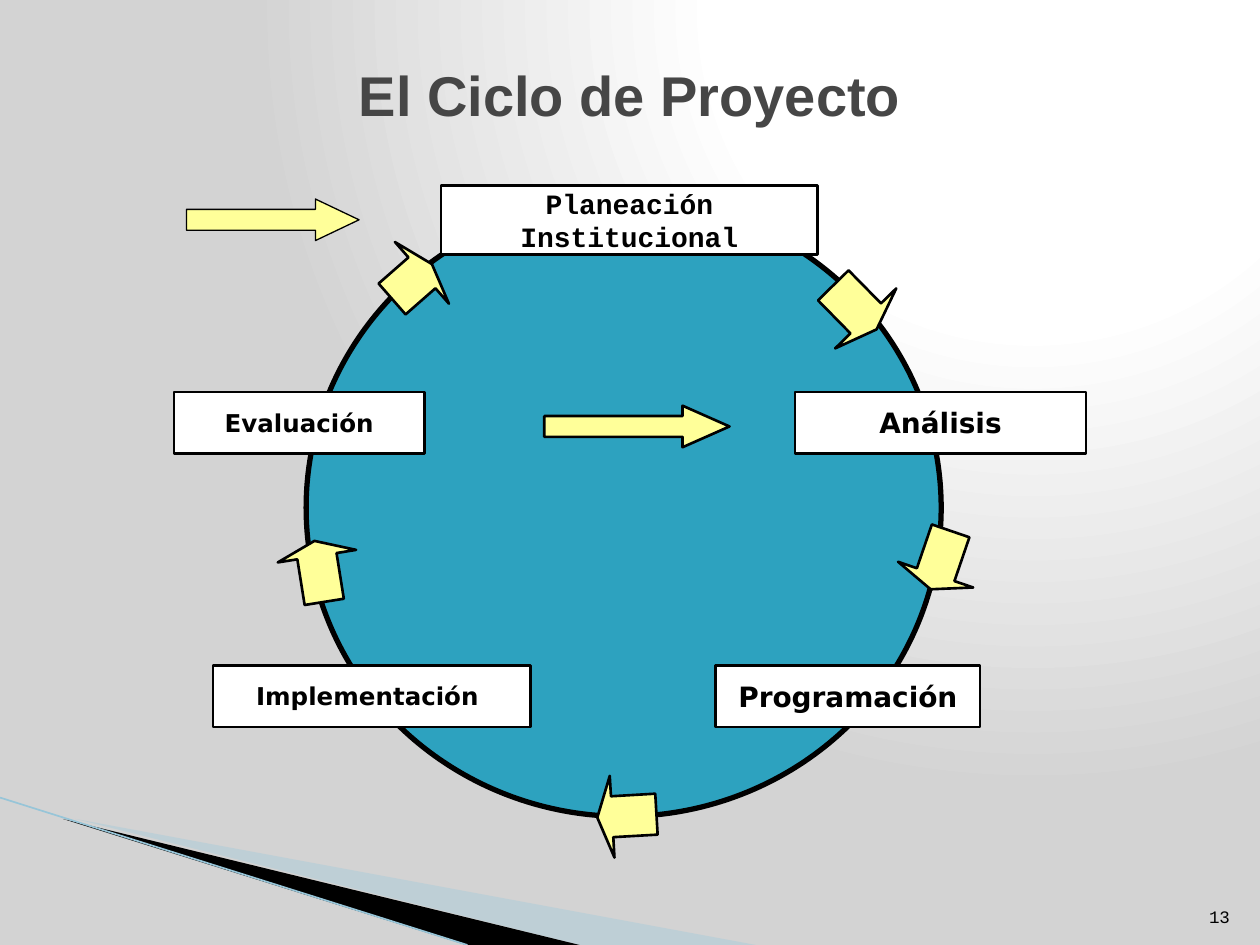
from typing import NamedTuple

from lxml.etree import SubElement
from pptx import Presentation
from pptx.dml.color import RGBColor
from pptx.enum.shapes import MSO_CONNECTOR, MSO_SHAPE
from pptx.enum.text import MSO_ANCHOR, PP_ALIGN
from pptx.oxml import parse_xml
from pptx.oxml.ns import nsdecls, qn
from pptx.util import Inches, Pt

COLS, ROWS = 100, 75
CELL = Inches(0.1)
COLORS = {
    "ink": "000000",
    "title": "464646",
    "paper": "FFFFFF",
    "edge": "D3D3D3",
    "disc": "2DA2BF",
    "arrow": "FFFF99",
    "wedge": "A0CBDC",
    "rule": "97C5D8",
}


class Area(NamedTuple):
    """Columns and rows of the grid."""
    left: float
    top: float
    width: float
    height: float


class Stage(NamedTuple):
    text: str
    area: Area
    size: int
    font: str = "DejaVu Sans"


class Arrow(NamedTuple):
    area: Area
    turn: float = 0
    head: float = 0.25
    line: float = 1.5


STAGES = [
    Stage("Planeación Institucional", Area(35, 14.7, 29.9, 5.5), 16, "Courier New"),
    Stage("Implementación ", Area(16.9, 52.8, 25.2, 4.9), 14),
    Stage("Programación", Area(56.8, 52.8, 21, 4.9), 16),
    Stage("Evaluación", Area(13.8, 31.1, 19.9, 4.9), 14),
    Stage("Análisis", Area(63.1, 31.1, 23.1, 4.9), 16),
]
ARROWS = [
    Arrow(Area(14.8, 15.8, 13.7, 3.3), head=1.05, line=0.75),
    Arrow(Area(30.6, 19.1, 4.2, 6.5), 318.8),
    Arrow(Area(65.4, 21, 4.9, 6.8), 45.5),
    Arrow(Area(43.2, 32.2, 14.7, 3.3), head=1.13),
    Arrow(Area(47.4, 61.5, 4.7, 6.5), 176.7),
    Arrow(Area(22.9, 42.2, 4.9, 6.3), 260.9),
    Arrow(Area(72.2, 41.3, 4.9, 6.3), 108.9),
]


def rgb(name: str) -> RGBColor:
    return RGBColor.from_string(COLORS[name])


def scale(area: Area) -> list[int]:
    return [round(n * CELL) for n in area]


def shade(slide) -> None:
    """Set the radial background, white at the upper right."""
    stops = "".join(
        f'<a:gs pos="{pos}000"><a:srgbClr val="{COLORS[name]}"/></a:gs>'
        for pos, name in ((0, "paper"), (40, "paper"), (100, "edge"))
    )
    slide.element.cSld.insert(0, parse_xml(
        f'<p:bg {nsdecls("p", "a")}><p:bgPr><a:gradFill rotWithShape="1">'
        f'<a:gsLst>{stops}</a:gsLst><a:path path="circle">'
        '<a:fillToRect l="65000" t="0" r="0" b="98000"/></a:path></a:gradFill>'
        '<a:effectLst/></p:bgPr></p:bg>'
    ))


def wedge(slide, points: list[tuple[float, float]], color: str, alpha: int = 100) -> None:
    form = slide.shapes.build_freeform(*points[0], scale=CELL)
    form.add_line_segments(points[1:])
    shape = form.convert_to_shape()
    shape.shadow.inherit = False
    shape.fill.solid()
    shape.fill.fore_color.rgb = rgb(color)
    shape.line.fill.background()
    if alpha < 100:
        tint = shape.fill._xPr.find(".//" + qn("a:srgbClr"))
        SubElement(tint, qn("a:alpha")).set("val", str(alpha * 1000))


def rule(slide) -> None:
    line = slide.shapes.add_connector(
        MSO_CONNECTOR.STRAIGHT, *scale(Area(0, 63.3, 37.1, ROWS)))
    line.line.color.rgb = rgb("rule")
    line.line.width = Pt(0.95)
    SubElement(line._element.spPr, qn("a:effectLst"))


def draw(slide, kind: MSO_SHAPE, area: Area, color: str, line: float):
    shape = slide.shapes.add_shape(kind, *scale(area))
    shape.shadow.inherit = False
    shape.fill.solid()
    shape.fill.fore_color.rgb = rgb(color)
    shape.line.color.rgb = rgb("ink")
    shape.line.width = Pt(line)
    return shape


def write(shape, text: str, size: int, font: str, color: str = "ink",
          bold: bool = True, align: PP_ALIGN = PP_ALIGN.CENTER,
          anchor: MSO_ANCHOR = MSO_ANCHOR.MIDDLE) -> None:
    frame = shape.text_frame
    frame.word_wrap = True
    frame.vertical_anchor = anchor
    par = frame.paragraphs[0]
    par.text = text
    par.alignment = align
    par.font.size = Pt(size)
    par.font.name = font
    par.font.bold = bold
    par.font.color.rgb = rgb(color)


def main() -> None:
    deck = Presentation()
    deck.slide_width, deck.slide_height = COLS * CELL, ROWS * CELL
    slide = deck.slides.add_slide(deck.slide_layouts[6])

    shade(slide)
    wedge(slide, [(5.5, 65.1), (59.5, ROWS), (45.6, ROWS), (5.5, 65)], "wedge", 40)
    wedge(slide, [(5.3, 64.9), (45.7, ROWS), (37.2, ROWS), (5.4, 65)], "ink")
    rule(slide)

    draw(slide, MSO_SHAPE.OVAL, Area(24.3, 15.8, 50.4, 49), "disc", 3)
    for stage in STAGES:
        box = draw(slide, MSO_SHAPE.RECTANGLE, stage.area, "paper", 1.5)
        write(box, stage.text, stage.size, stage.font)
    for arrow in ARROWS:
        shape = draw(slide, MSO_SHAPE.RIGHT_ARROW, arrow.area, "arrow", arrow.line)
        shape.adjustments[1] = arrow.head
        shape.rotation = arrow.turn

    title = slide.shapes.add_textbox(*scale(Area(7.5, 3.3, 85, 8.3)))
    write(title, "El Ciclo de Proyecto", 32, "Arial", "title")
    number = slide.shapes.add_textbox(*scale(Area(94.6, 70.1, 4, 4)))
    write(number, "13", 10, "Courier New", bold=False,
          align=PP_ALIGN.RIGHT, anchor=MSO_ANCHOR.BOTTOM)
    deck.save("out.pptx")


if __name__ == "__main__":
    main()
